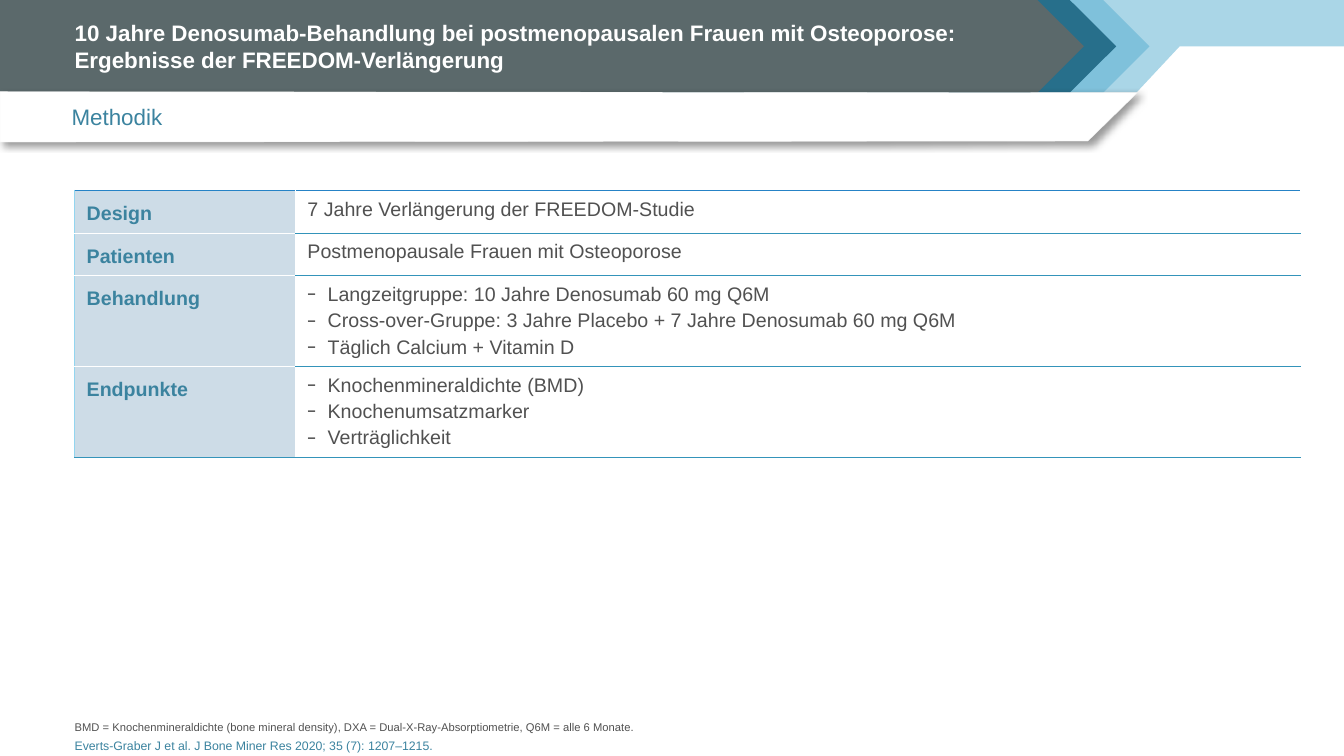
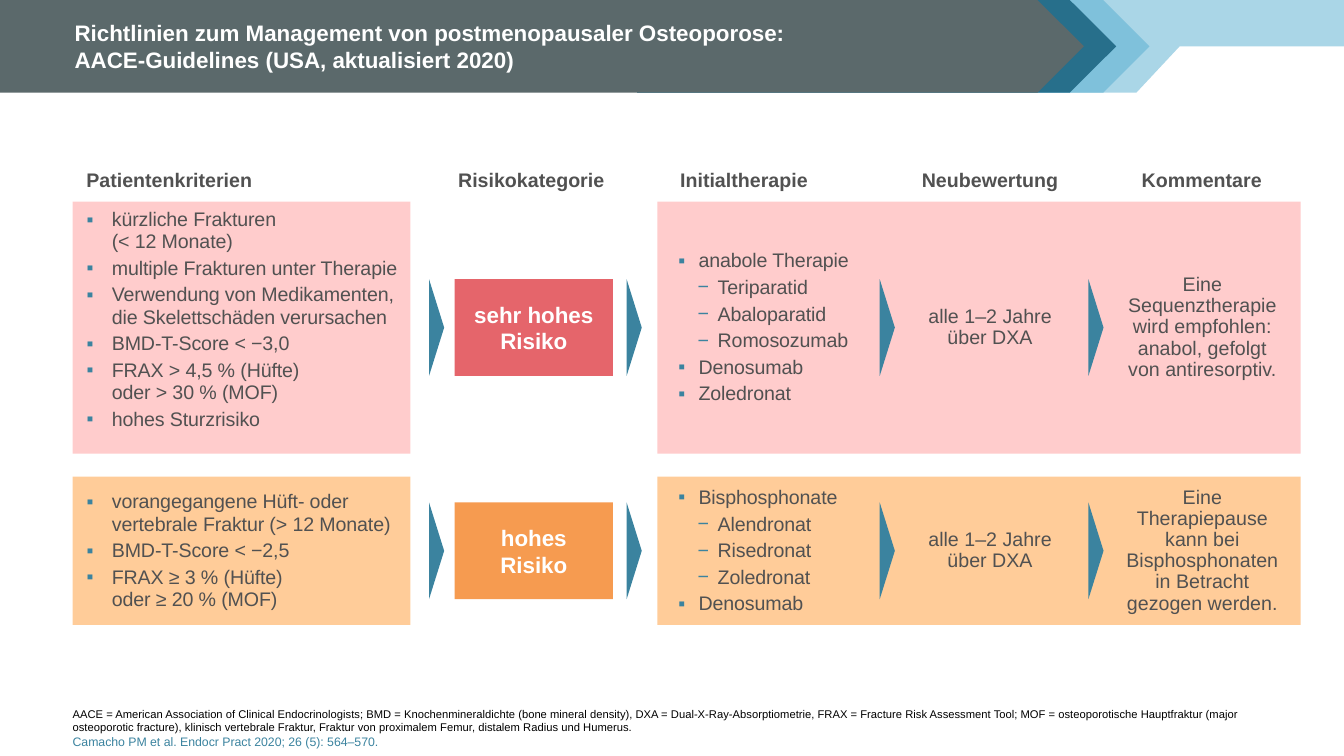
from dataclasses import dataclass, field
from typing import NamedTuple, Optional

from lxml.etree import SubElement
from pptx import Presentation
from pptx.dml.color import RGBColor as RGB
from pptx.enum.shapes import MSO_SHAPE as Shp
from pptx.enum.text import MSO_ANCHOR as Anchor, MSO_AUTO_SIZE as AutoSize, PP_ALIGN as Align
from pptx.oxml.ns import qn
from pptx.util import Inches, Pt


# Theme
@dataclass(frozen=True)
class Theme:
    font: str = "Arial"
    white: str = "FFFFFF"
    black: str = "000000"
    text: str = "515151"
    accent: str = "3B839F"
    title_bar: str = "5B696B"
    chevron_dark: str = "276F8B"
    chevron_mid: str = "7FC1DB"
    chevron_light: str = "AAD6E7"
    outline: str = "F2F2F2"
    label_fill: str = "CDDCE7"
    label_edge: str = "93D5EF"
    table_top: str = "2683C6"
    table_rule: str = "3494BA"
    heading_size: float = 16
    body_size: float = 14
    note_size: float = 8
    source_size: float = 8.8


T = Theme()


class Box(NamedTuple):
    left: float
    top: float
    width: float
    height: float

    def emu(self) -> list:
        return [Inches(v) for v in self]


class Bullet(NamedTuple):
    char: str
    left: float
    hang: float
    color: str = T.accent
    percent: int = 100


@dataclass(frozen=True)
class Style:
    size: float = T.body_size
    color: str = T.text
    bold: bool = False
    spc: int = 0
    para: dict = field(default_factory=dict)
    bullet: Optional[Bullet] = None


class Line(NamedTuple):
    text: str
    style: Style


def centred(spacing: float) -> dict:
    return {"alignment": Align.CENTER, "line_spacing": spacing}


LIST_PARA = {"line_spacing": 0.95, "space_before": Pt(3)}
TITLE = Style(T.heading_size, T.white, True, para={"alignment": Align.LEFT})
SUBTITLE = Style(T.heading_size, T.accent, para={"alignment": Align.LEFT})
RISK = Style(T.heading_size, T.white, True, para=centred(1.0))
COLUMN = Style(bold=True, para=centred(0.9))
CENTRE = Style(para=centred(0.9))
ROW_LABEL = Style(color=T.accent, bold=True, para={"line_spacing": 1.2})
CELL = Style(para={"space_before": Pt(3)})
CELL_DASH = Style(para=CELL.para, bullet=Bullet("−", 0.2, 0.2, T.black, 75))
CRITERION = Style(spc=-10, para=LIST_PARA, bullet=Bullet("▪", 0.25, 0.25))
DRUG = Style(spc=-10, para=LIST_PARA, bullet=Bullet("▪", 0.2, 0.2))
SUBDRUG = Style(spc=-10, para=LIST_PARA, bullet=Bullet("−", 0.39, 0.2))


# Text helpers
def set_all(obj, values: dict) -> None:
    for name, value in values.items():
        setattr(obj, name, value)


def set_bullet(p, bullet: Optional[Bullet]) -> None:
    pPr = p._p.get_or_add_pPr()
    if bullet is None:
        pPr.set("marL", "0")
        pPr.set("indent", "0")
        SubElement(pPr, qn("a:buNone"))
        return
    pPr.set("marL", str(Inches(bullet.left)))
    pPr.set("indent", str(-Inches(bullet.hang)))
    SubElement(SubElement(pPr, qn("a:buClr")), qn("a:srgbClr"), val=bullet.color)
    SubElement(pPr, qn("a:buSzPct"), val=str(bullet.percent * 1000))
    SubElement(pPr, qn("a:buFont"), typeface=T.font)
    SubElement(pPr, qn("a:buChar"), char=bullet.char)


def write(tf, lines: list, ins: tuple = (0.1, 0.05, 0.1, 0.05), anchor=Anchor.MIDDLE) -> None:
    sides = ("margin_left", "margin_top", "margin_right", "margin_bottom")
    set_all(tf, {"word_wrap": True, "auto_size": AutoSize.NONE, "vertical_anchor": anchor,
                 **{side: Inches(v) for side, v in zip(sides, ins)}})
    write_lines(tf, lines)


def write_lines(tf, lines: list) -> None:
    for i, (text, style) in enumerate(lines):
        p = tf.add_paragraph() if i else tf.paragraphs[0]
        p.text = text
        set_all(p, style.para)
        set_bullet(p, style.bullet)
        for r in p.runs:
            set_all(r.font, {"name": T.font, "size": Pt(style.size), "bold": style.bold})
            r.font.color.rgb = RGB.from_string(style.color)
            if style.spc:
                r.font._element.set("spc", str(style.spc))
        for br in p._p.findall(qn("a:br")):
            SubElement(br, qn("a:rPr"), sz=str(int(style.size * 100)))


# Shape helpers
def paint(sp, color: str):
    sp.shadow.inherit = False
    sp.fill.solid()
    sp.fill.fore_color.rgb = RGB.from_string(color)
    sp.line.fill.background()
    return sp


def add_block(s, kind, box: Box, color: str):
    return paint(s.shapes.add_shape(kind, *box.emu()), color)


def add_outline(s, points: list, color: str):
    pts = [(Inches(x), Inches(y)) for x, y in points]
    builder = s.shapes.build_freeform(*pts[0], scale=1.0)
    builder.add_line_segments(pts[1:], close=True)
    return paint(builder.convert_to_shape(), color)


def add_text(s, box: Box, lines: list, **layout) -> None:
    write(s.shapes.add_textbox(*box.emu()).text_frame, lines, **layout)


# Shared header band and placeholders
def add_header_band(s, layout) -> None:
    """Draw the band and move it behind the layout's placeholders."""
    h = 0.92
    band = [add_outline(s, [(6.32, h), (11.27, h), (11.7, h / 2), (13.33, h / 2),
                            (13.33, 0), (6.32, 0)], T.chevron_light)]
    for left, width, color in ((6.32, 5.08, T.chevron_mid), (6.32, 4.75, T.chevron_dark),
                               (0, 10.75, T.title_bar)):
        band.append(add_block(s, Shp.PENTAGON, Box(left, 0, width, h), color))
    for i, sp in enumerate(band):
        sp.element.nvSpPr.cNvPr.id = 20 + i
        layout.shapes.element.insert(2 + i, sp.element)


def place(sp, box: Box) -> None:
    set_all(sp, dict(zip(("left", "top", "width", "height"), box.emu())))


def add_slide(prs, layout, title: str, note: str, source: str, note_box: Box,
              note_color: str, gap: float):
    s = prs.slides.add_slide(layout)
    place(s.shapes.title, Box(0.74, 0.12, 9.4, 0.67))
    write(s.shapes.title.text_frame, [Line(title, TITLE)], ins=(0, 0.05, 0.1, 0.05))
    body = s.placeholders[1]
    place(body, note_box)
    para = {"space_before": Pt(gap)}
    write(body.text_frame, [Line(note, Style(T.note_size, note_color, para=para)),
                            Line(source, Style(T.source_size, T.accent, para=para))],
          ins=(0, 0.05, 0.1, 0), anchor=Anchor.BOTTOM)
    return s


# Slide 1: study design table
METHODS = [
    ("Design", 0.42, [Line("7 Jahre Verlängerung der FREEDOM-Studie", CELL)]),
    ("Patienten", 0.42, [Line("Postmenopausale Frauen mit Osteoporose", CELL)]),
    ("Behandlung", 0.9, [Line(t, CELL_DASH) for t in (
        "Langzeitgruppe: 10 Jahre Denosumab 60 mg Q6M",
        "Cross-over-Gruppe: 3 Jahre Placebo + 7 Jahre Denosumab 60 mg Q6M",
        "Täglich Calcium + Vitamin D")]),
    ("Endpunkte", 0.9, [Line(t, CELL_DASH) for t in (
        "Knochenmineraldichte (BMD)", "Knochenumsatzmarker", "Verträglichkeit")]),
]


def set_borders(cell, **edges: tuple) -> None:
    tcPr = cell._tc.get_or_add_tcPr()
    for side in "LRTB":
        color, width = edges.get(side, (T.white, 1))
        ln = SubElement(tcPr, qn(f"a:ln{side}"), w=str(Pt(width)))
        SubElement(SubElement(ln, qn("a:solidFill")), qn("a:srgbClr"), val=color)


def add_methods_table(s) -> None:
    heights = [h for _, h, _ in METHODS]
    box = Box(0.74, 1.89, 12.16, sum(heights))
    tbl = s.shapes.add_table(len(METHODS), 2, *box.emu()).table
    set_all(tbl, {"first_row": False, "horz_banding": False})
    for col, width in zip(tbl.columns, (2.19, 9.97)):
        col.width = Inches(width)
    for i, (label, height, lines) in enumerate(METHODS):
        tbl.rows[i].height = Inches(height)
        rule, last = (T.table_rule, 0.5), (T.table_rule, 1)
        bottom = last if i == len(METHODS) - 1 else None
        top = (T.table_top, 1) if i == 0 else None
        head, info = tbl.cell(i, 0), tbl.cell(i, 1)
        set_borders(head, L=(T.label_edge, 0.5), T=top or (T.white, 1), B=bottom or (T.white, 1))
        set_borders(info, T=top or rule, B=bottom or rule)
        head.fill.solid()
        head.fill.fore_color.rgb = RGB.from_string(T.label_fill)
        info.fill.background()
        for cell, content in ((head, [Line(label, ROW_LABEL)]), (info, lines)):
            set_all(cell, {"margin_left": Inches(0.12), "margin_right": 0,
                           "margin_top": Inches(0.08), "margin_bottom": Inches(0.08)})
            write_lines(cell.text_frame, content)


def add_subtitle_ribbon(s, text: str) -> None:
    sp = add_outline(s, [(11.28, 0.92), (10.79, 1.4), (0, 1.41), (0, 0.91)], T.white)
    sp.line.color.rgb = RGB.from_string(T.outline)
    sp.line.width = Pt(0.25)
    effects = sp.element.spPr.find(qn("a:effectLst"))
    shadow = SubElement(effects, qn("a:outerShdw"), blurRad=str(Pt(5)), dist=str(Pt(3)),
                        dir="2700000", algn="tl", rotWithShape="0")
    color = SubElement(shadow, qn("a:srgbClr"), val=T.black)
    SubElement(color, qn("a:alpha"), val="40000")
    write(sp.text_frame, [Line(text, SUBTITLE)], ins=(0.71, 0, 0, 0))


# Slide 2: risk pathways
@dataclass(frozen=True)
class Pathway:
    top: float
    height: float
    list_top: float
    card: str
    badge: str
    risk: str
    criteria: list
    therapy: list
    comment: str

    def centred_box(self, left: float, width: float, height: float) -> Box:
        return Box(left, self.top + (self.height - height) / 2, width, height)


COLUMNS = [("Patientenkriterien", 1.68), ("Risikokategorie", 5.27), ("Initialtherapie", 7.38),
           ("Neubewertung", 9.82), ("Kommentare", 11.92)]
ARROW_CENTRES = (4.33, 6.29, 8.8, 10.87)
PATHWAYS = [
    Pathway(2, 2.5, 2.03, "FFCCCC", "E5656B", "sehr hohes Risiko",
            ["kürzliche Frakturen\v(< 12 Monate)", "multiple Frakturen unter Therapie",
             "Verwendung von Medikamenten, die Skelettschäden verursachen",
             "BMD-T-Score < −3,0", "FRAX > 4,5 % (Hüfte)\voder > 30 % (MOF)",
             "hohes Sturzrisiko"],
            [Line("anabole Therapie", DRUG), Line("Teriparatid", SUBDRUG),
             Line("Abaloparatid", SUBDRUG), Line("Romosozumab", SUBDRUG),
             Line("Denosumab", DRUG), Line("Zoledronat", DRUG)],
            "Eine Sequenztherapie wird empfohlen: anabol, gefolgt von antiresorptiv."),
    Pathway(4.73, 1.47, 4.83, "FFCC99", "F69B50", "hohes Risiko",
            ["vorangegangene Hüft- oder vertebrale Fraktur (> 12 Monate)",
             "BMD-T-Score < −2,5", "FRAX ≥ 3 % (Hüfte)\voder ≥ 20 % (MOF)"],
            [Line("Bisphosphonate", DRUG), Line("Alendronat", SUBDRUG),
             Line("Risedronat", SUBDRUG), Line("Zoledronat", SUBDRUG), Line("Denosumab", DRUG)],
            "Eine Therapiepause kann bei Bisphosphonaten in Betracht gezogen werden."),
]


def add_pathway(s, path: Pathway) -> None:
    for left, width in ((0.72, 3.35), (6.52, 6.38)):
        add_block(s, Shp.RECTANGLE, Box(left, path.top, width, path.height), path.card)
    add_text(s, Box(0.78, path.list_top, 3.24, path.top + path.height - path.list_top),
             [Line(t, CRITERION) for t in path.criteria],
             ins=(0.08, 0.04, 0.04, 0.04), anchor=Anchor.TOP)
    badge = add_block(s, Shp.RECTANGLE, path.centred_box(4.51, 1.57, 0.96), path.badge)
    write(badge.text_frame, [Line(path.risk, RISK)])
    add_text(s, path.centred_box(6.63, 2.03, path.height), path.therapy)
    add_text(s, path.centred_box(9.09, 1.46, 0.53), [Line("alle 1–2 Jahre über DXA", CENTRE)])
    add_text(s, path.centred_box(11.07, 1.71, 1.37), [Line(path.comment, CENTRE)])
    for x in ARROW_CENTRES:
        arrow = add_block(s, Shp.ISOSCELES_TRIANGLE,
                          path.centred_box(x - 0.48, 0.96, 0.15), T.accent)
        arrow.rotation = 90


def main() -> None:
    prs = Presentation()
    prs.slide_width, prs.slide_height = Inches(13.33), Inches(7.5)
    layout = prs.slide_layouts[1]

    s = add_slide(
        prs, layout, "10 Jahre Denosumab-Behandlung bei postmenopausalen Frauen mit Osteoporose: "
        "Ergebnisse der FREEDOM-Verlängerung",
        "BMD = Knochenmineraldichte (bone mineral density), DXA = Dual-X-Ray-Absorptiometrie, "
        "Q6M = alle 6 Monate.", "Everts-Graber J et al. J Bone Miner Res 2020; 35 (7): 1207–1215.",
        Box(0.74, 6.97, 12.17, 0.5), T.text, 3)
    add_header_band(s, layout)
    add_methods_table(s)
    add_subtitle_ribbon(s, "Methodik")

    s = add_slide(
        prs, layout, "Richtlinien zum Management von postmenopausaler Osteoporose:\v"
        "AACE-Guidelines (USA, aktualisiert 2020)",
        "AACE = American Association of Clinical Endocrinologists; BMD = Knochenmineraldichte "
        "(bone mineral density), DXA = Dual-X-Ray-Absorptiometrie, FRAX = Fracture Risk Assessment "
        "Tool; MOF = osteoporotische Hauptfraktur (major osteoporotic fracture), klinisch "
        "vertebrale Fraktur, Fraktur von proximalem Femur, distalem Radius und Humerus.",
        "Camacho PM et al. Endocr Pract 2020; 26 (5): 564–570.",
        Box(0.72, 6.93, 12.17, 0.5), T.black, 0)
    for name, centre in COLUMNS:
        add_text(s, Box(centre - 0.95, 1.58, 1.9, 0.44), [Line(name, COLUMN)], ins=(0, 0, 0, 0))
    for path in PATHWAYS:
        add_pathway(s, path)
    prs.save("out.pptx")


if __name__ == "__main__":
    main()
